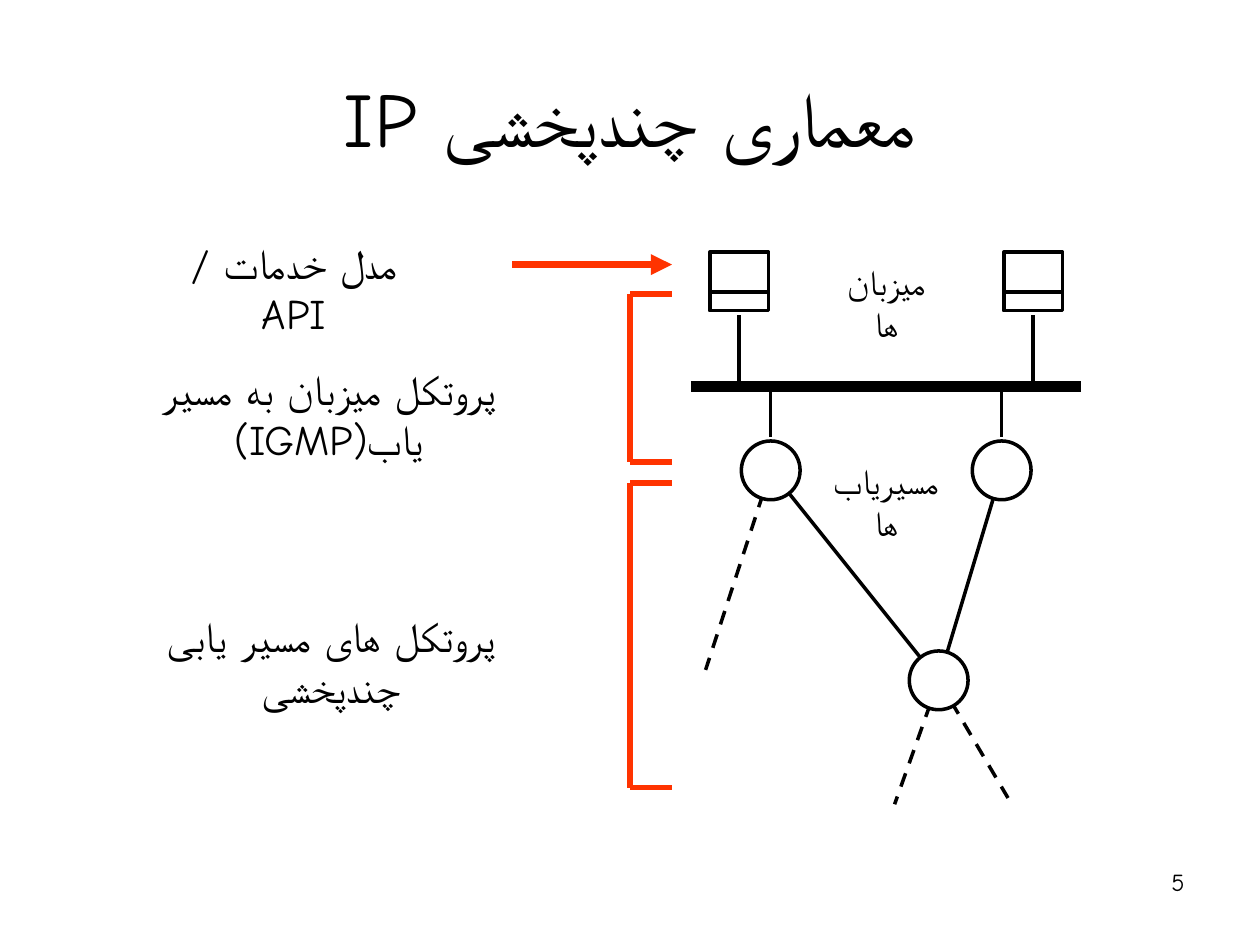
from dataclasses import dataclass
from typing import NamedTuple

from lxml.etree import SubElement
from pptx import Presentation
from pptx.dml.color import RGBColor
from pptx.enum.dml import MSO_LINE
from pptx.enum.shapes import MSO_CONNECTOR, MSO_SHAPE
from pptx.enum.text import MSO_ANCHOR, MSO_AUTO_SIZE, PP_ALIGN
from pptx.oxml.ns import qn
from pptx.util import Inches, Pt


@dataclass(frozen=True)
class Theme:
    font: str = "Comic Neue"
    ink: RGBColor = RGBColor(0x00, 0x00, 0x00)
    paper: RGBColor = RGBColor(0xFF, 0xFF, 0xFF)
    accent: RGBColor = RGBColor(0xFF, 0x33, 0x00)
    title_size: int = 44
    layer_size: int = 24
    node_size: int = 20
    number_size: int = 14
    thin: int = 2
    bracket: int = 3
    arrow: int = 4
    bus: int = 6


class Point(NamedTuple):
    col: float
    row: float


class Box(NamedTuple):
    col: float
    row: float
    cols: float
    rows: float


class Label(NamedTuple):
    words: str
    box: Box
    size: int


THEME = Theme()
WIDTH, HEIGHT = Inches(10), Inches(7.5)
COLUMNS, ROWS = 60, 45
NODE = 2.8  # side of a host and diameter of a router, in grid cells

# Network layout in grid cells
HOST_COLS, HOST_ROW = (35.2, 49.2), 12
BUS_ROW = 18.4
EDGE_ROUTERS = (Point(36.7, 22.4), Point(47.7, 22.4))
CORE_ROUTER = Point(44.7, 32.4)
ROUTED_LINKS = [(router, CORE_ROUTER) for router in EDGE_ROUTERS]
OPEN_LINKS = [
    (EDGE_ROUTERS[0], Point(33.6, 31.9)),
    (CORE_ROUTER, Point(42.6, 38.3)),
    (CORE_ROUTER, Point(48, 38)),
]
BRACKET_LEFT, BRACKET_RIGHT = 30, 32
BRACKET_ROWS = [(14, 22), (23, 37.5)]

LABELS = [
    Label("میزبان ها", Box(39, 12.1, 6.4, 2.6), THEME.node_size),
    Label("مسیریاب ها", Box(38.3, 21.6, 7.8, 2.6), THEME.node_size),
    Label("مدل خدمات / API", Box(7, 11, 14, 3), THEME.layer_size),
    Label("پروتکل میزبان به مسیر یاب(IGMP)", Box(2.5, 17, 26.3, 3), THEME.layer_size),
    Label("پروتکل های مسیر یابی چندپخشی", Box(4.2, 28.8, 23.1, 3), THEME.layer_size),
]


def x(cols: float) -> int:
    return round(WIDTH * cols / COLUMNS)


def y(rows: float) -> int:
    return round(HEIGHT * rows / ROWS)


def frame(box: Box) -> tuple[int, int, int, int]:
    return x(box.col), y(box.row), x(box.cols), y(box.rows)


def write(text_frame, words: str, size: int, align=PP_ALIGN.CENTER,
          anchor=MSO_ANCHOR.TOP, rtl: bool = True) -> None:
    layout = {"word_wrap": True, "auto_size": MSO_AUTO_SIZE.NONE, "vertical_anchor": anchor}
    for attribute, value in layout.items():
        setattr(text_frame, attribute, value)
    paragraph = text_frame.paragraphs[0]
    paragraph.alignment = align
    if rtl:
        paragraph._p.get_or_add_pPr().set("rtl", "1")
    run = paragraph.add_run()
    run.text = words
    for attribute, value in {"name": THEME.font, "size": Pt(size), "bold": False}.items():
        setattr(run.font, attribute, value)
    run.font.color.rgb = THEME.ink
    SubElement(run._r.get_or_add_rPr(), qn("a:cs"), typeface=THEME.font)


def add_label(slide, label: Label, **layout) -> None:
    write(slide.shapes.add_textbox(*frame(label.box)).text_frame,
          label.words, label.size, **layout)


def add_line(slide, start: Point, end: Point, color: RGBColor = THEME.ink,
             weight: int = THEME.thin, dashed: bool = False, arrow: bool = False) -> None:
    line = slide.shapes.add_connector(
        MSO_CONNECTOR.STRAIGHT, x(start.col), y(start.row), x(end.col), y(end.row))
    line.line.color.rgb = color
    line.line.width = Pt(weight)
    if dashed:
        line.line.dash_style = MSO_LINE.DASH
    if arrow:
        SubElement(line.line._get_or_add_ln(), qn("a:tailEnd"), type="triangle")
    SubElement(line._element.spPr, qn("a:effectLst"))


def add_node(slide, kind: MSO_SHAPE, center: Point) -> None:
    box = Box(center.col - NODE / 2, center.row - NODE / 2, NODE, NODE)
    node = slide.shapes.add_shape(kind, *frame(box))
    node.shadow.inherit = False
    node.fill.solid()
    node.fill.fore_color.rgb = THEME.paper
    node.line.color.rgb = THEME.ink
    node.line.width = Pt(THEME.thin)


def add_host(slide, col: float) -> None:
    add_node(slide, MSO_SHAPE.RECTANGLE, Point(col, HOST_ROW + NODE / 2))
    add_line(slide, Point(col - NODE / 2, 13.9), Point(col + NODE / 2, 13.9))
    add_line(slide, Point(col, 15), Point(col, BUS_ROW))


def add_bracket(slide, top: float, bottom: float) -> None:
    corners = [Point(BRACKET_RIGHT, top), Point(BRACKET_LEFT, top),
               Point(BRACKET_LEFT, bottom), Point(BRACKET_RIGHT, bottom)]
    for start, end in zip(corners, corners[1:]):
        add_line(slide, start, end, THEME.accent, THEME.bracket)


def main() -> None:
    deck = Presentation()
    deck.slide_width, deck.slide_height = WIDTH, HEIGHT
    slide = deck.slides.add_slide(deck.slide_layouts[5])

    # Title and page number
    title = slide.shapes.title
    title.left, title.top, title.width, title.height = frame(Box(3, 1.8, 54, 7.5))
    write(title.text_frame, "معماری چندپخشی IP", THEME.title_size, anchor=MSO_ANCHOR.MIDDLE)
    add_label(slide, Label("5", Box(43, 41, 14, 3.1), THEME.number_size),
              align=PP_ALIGN.RIGHT, rtl=False)

    # Hosts on the shared bus
    for col in HOST_COLS:
        add_host(slide, col)
    add_line(slide, Point(32.9, BUS_ROW), Point(51.5, BUS_ROW), weight=THEME.bus)

    # Links first, so that the routers cover their ends
    for router in EDGE_ROUTERS:
        add_line(slide, Point(router.col, BUS_ROW), Point(router.col, 20.8))
    for start, end in ROUTED_LINKS:
        add_line(slide, start, end)
    for start, end in OPEN_LINKS:
        add_line(slide, start, end, dashed=True)
    for router in (*EDGE_ROUTERS, CORE_ROUTER):
        add_node(slide, MSO_SHAPE.OVAL, router)

    # Protocol layers beside the network
    for label in LABELS:
        add_label(slide, label)
    add_line(slide, Point(24.4, 12.6), Point(BRACKET_RIGHT, 12.6),
             THEME.accent, THEME.arrow, arrow=True)
    for top, bottom in BRACKET_ROWS:
        add_bracket(slide, top, bottom)

    deck.save("out.pptx")


if __name__ == "__main__":
    main()
